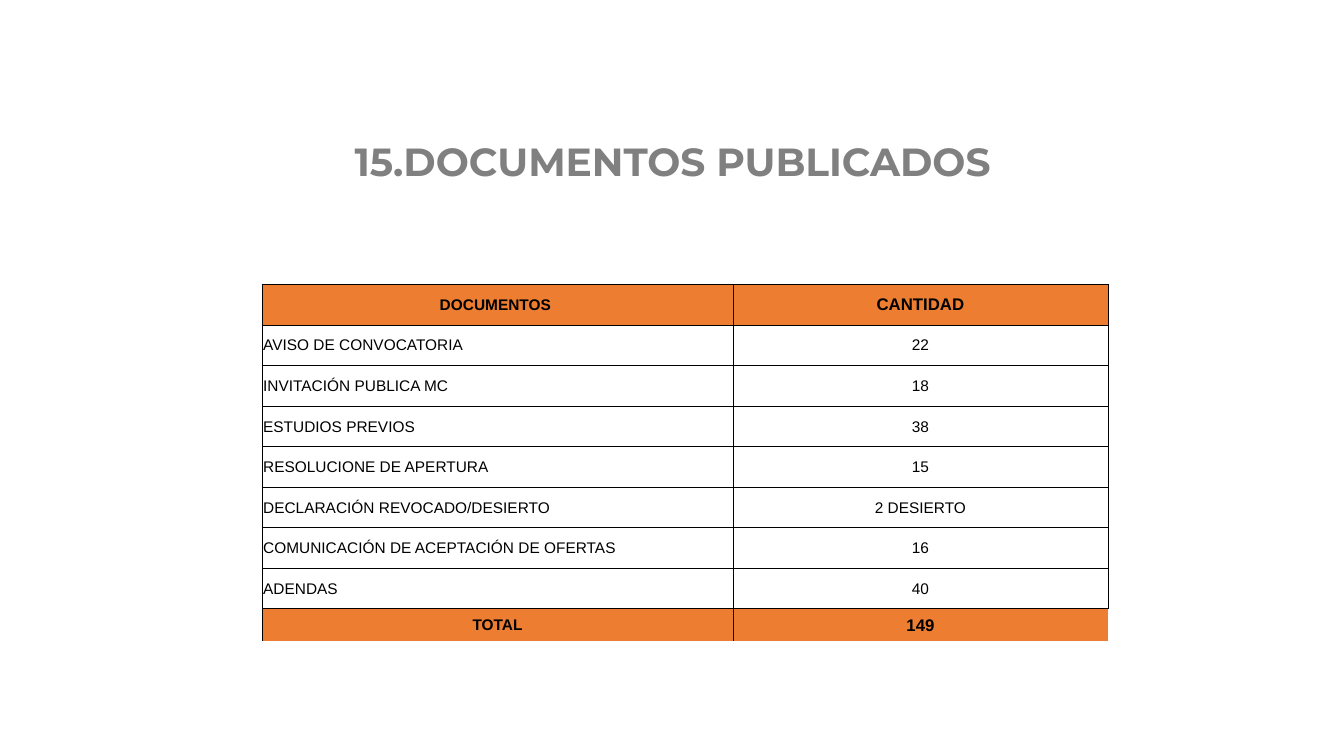
from lxml import etree
from pptx import Presentation
from pptx.dml.color import RGBColor
from pptx.enum.text import MSO_ANCHOR, PP_ALIGN
from pptx.oxml.ns import qn
from pptx.util import Inches, Pt

CENTER, LEFT = PP_ALIGN.CENTER, PP_ALIGN.LEFT
MIDDLE, BOTTOM = MSO_ANCHOR.MIDDLE, MSO_ANCHOR.BOTTOM
ORANGE = RGBColor(0xED, 0x7D, 0x31)
WHITE = RGBColor(0xFF, 0xFF, 0xFF)
BLACK = RGBColor(0, 0, 0)
GRAY = RGBColor(0x80, 0x80, 0x80)

TITLE = "15.DOCUMENTOS PUBLICADOS"
ROWS = [
    ("DOCUMENTOS ", "CANTIDAD"),
    ("AVISO DE CONVOCATORIA ", "22"),
    ("INVITACIÓN PUBLICA MC ", "18"),
    ("ESTUDIOS PREVIOS", "38"),
    ("RESOLUCIONE DE APERTURA ", "15"),
    ("DECLARACIÓN REVOCADO/DESIERTO ", "2 DESIERTO"),
    ("COMUNICACIÓN DE ACEPTACIÓN DE OFERTAS", "16"),
    ("ADENDAS ", "40"),
    ("TOTAL", "149"),
]
COLUMN_WIDTHS = (4.67, 3.72)
TABLE_LEFT, TABLE_TOP, TABLE_HEIGHT = 2.6, 2.82, 3.54
TOTAL_HEIGHT = 0.32
LAST_ROW = len(ROWS) - 1
ROW_HEIGHT = (TABLE_HEIGHT - TOTAL_HEIGHT) / LAST_ROW


def format_paragraph(paragraph, font_name, size, color, bold, alignment):
    paragraph.alignment = alignment
    for run in paragraph.runs:
        run.font.name = font_name
        run.font.size = Pt(size)
        run.font.color.rgb = color
        run.font.bold = bold


def set_borders(cell, visible_sides):
    """Draw thin black lines on the given sides (L, R, T, B) and none on the others."""
    properties = cell._tc.get_or_add_tcPr()
    for index, side in enumerate("LRTB"):
        line = etree.Element(qn(f"a:ln{side}"), w=str(Pt(0.5)))
        if side in visible_sides:
            fill = etree.SubElement(line, qn("a:solidFill"))
            etree.SubElement(fill, qn("a:srgbClr"), val=str(BLACK))
        else:
            etree.SubElement(line, qn("a:noFill"))
        properties.insert(index, line)


def add_title(slide):
    box = slide.shapes.add_textbox(Inches(0.92), Inches(0.87), Inches(11.5), Inches(1.01))
    frame = box.text_frame
    frame.word_wrap = True
    frame.vertical_anchor = BOTTOM
    frame.text = TITLE
    paragraph = frame.paragraphs[0]
    paragraph.line_spacing = 0.9
    format_paragraph(paragraph, "Montserrat", 28, GRAY, True, CENTER)


def fill_cell(cell, text, row, column):
    emphasized = row in (0, LAST_ROW)
    cell.margin_left = cell.margin_right = cell.margin_top = Inches(0.01)
    cell.margin_bottom = 0
    cell.vertical_anchor = MIDDLE
    cell.fill.solid()
    cell.fill.fore_color.rgb = ORANGE if emphasized else WHITE
    cell.text_frame.text = text
    size = 12 if emphasized and column == 1 else 11
    alignment = CENTER if emphasized or column == 1 else LEFT
    format_paragraph(cell.text_frame.paragraphs[0], "Arial", size, BLACK, emphasized, alignment)
    if row < LAST_ROW:
        set_borders(cell, "LRTB")
    else:
        set_borders(cell, "LRT" if column == 0 else "LT")


def add_documents_table(slide):
    table = slide.shapes.add_table(
        len(ROWS), len(COLUMN_WIDTHS), Inches(TABLE_LEFT), Inches(TABLE_TOP),
        Inches(sum(COLUMN_WIDTHS)), Inches(TABLE_HEIGHT)).table
    table.first_row = table.horz_banding = False
    for column, width in zip(table.columns, COLUMN_WIDTHS):
        column.width = Inches(width)
    for row, texts in enumerate(ROWS):
        table.rows[row].height = Inches(TOTAL_HEIGHT if row == LAST_ROW else ROW_HEIGHT)
        for column, text in enumerate(texts):
            fill_cell(table.cell(row, column), text, row, column)


def main():
    presentation = Presentation()
    presentation.slide_width = Inches(13.33)
    presentation.slide_height = Inches(7.5)
    slide = presentation.slides.add_slide(presentation.slide_layouts[6])
    add_title(slide)
    add_documents_table(slide)
    presentation.save("out.pptx")


if __name__ == "__main__":
    main()
